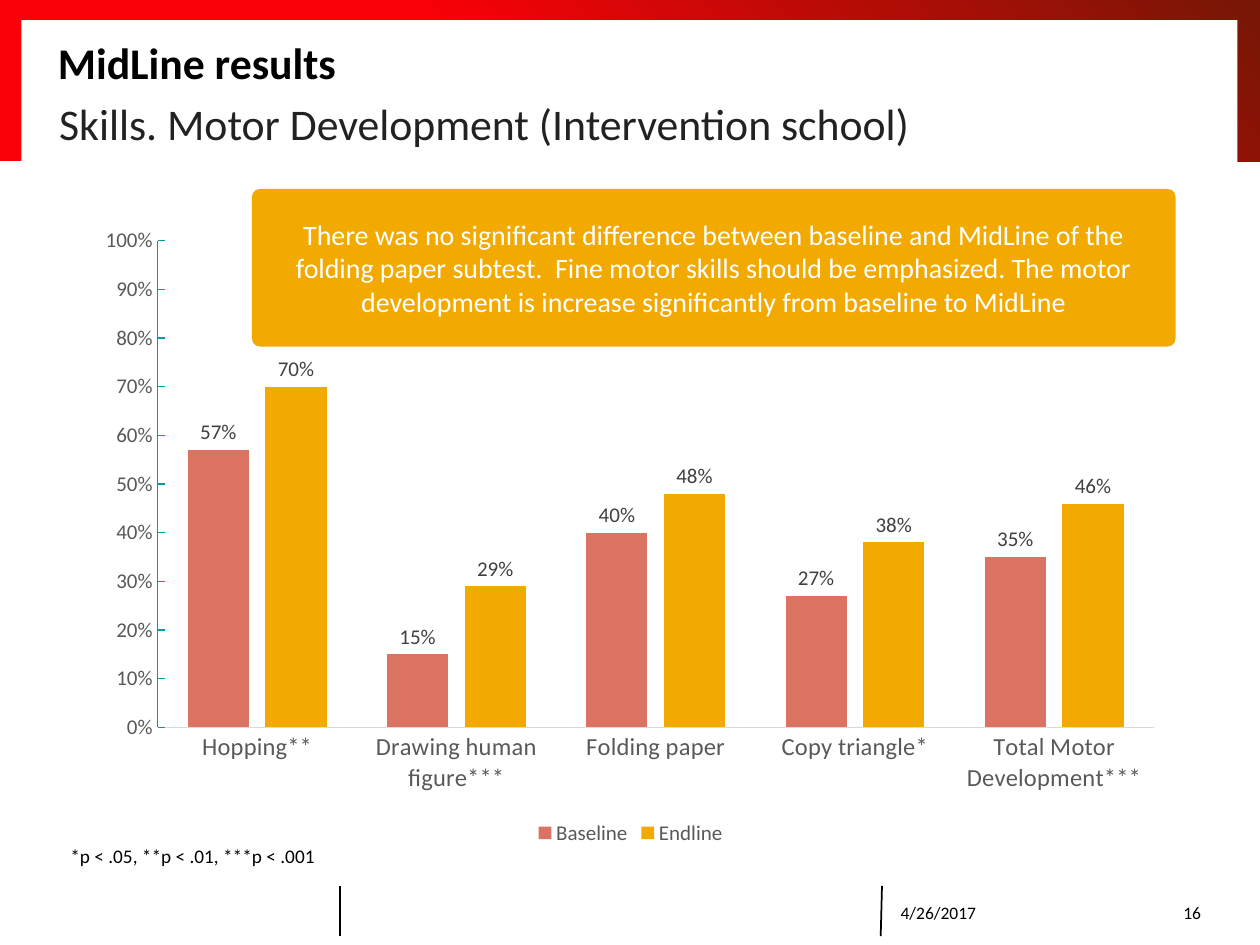
from lxml.etree import SubElement
from pptx import Presentation
from pptx.chart.data import CategoryChartData
from pptx.dml.color import RGBColor
from pptx.enum.chart import XL_CHART_TYPE, XL_LABEL_POSITION, XL_LEGEND_POSITION, XL_TICK_MARK
from pptx.enum.shapes import MSO_CONNECTOR, MSO_SHAPE
from pptx.enum.text import MSO_ANCHOR, PP_ALIGN
from pptx.oxml.ns import qn
from pptx.util import Inches, Pt

FONT = "Calibri"
BLACK = RGBColor(0x00, 0x00, 0x00)
WHITE = RGBColor(0xFF, 0xFF, 0xFF)
INK = RGBColor(0x22, 0x22, 0x21)
RED = RGBColor(0xFA, 0x00, 0x07)
MAROON = RGBColor(0x76, 0x17, 0x06)
CORAL = RGBColor(0xDB, 0x73, 0x63)
AMBER = RGBColor(0xF2, 0xA9, 0x00)
TEAL = RGBColor(0x00, 0x9C, 0xA6)
AXIS_TEXT = RGBColor(0x59, 0x59, 0x59)
LABEL_TEXT = RGBColor(0x40, 0x40, 0x40)
AXIS_LINE = RGBColor(0xD9, 0xD9, 0xD9)

TITLE = "MidLine results"
SUBTITLE = "Skills. Motor Development (Intervention school)"
FINDING = (
    "There was no significant difference between baseline and MidLine of the "
    "folding paper subtest.  Fine motor skills should be emphasized. "
    "The motor development is increase significantly from baseline to MidLine"
)
SIGNIFICANCE = "*p < .05, **p < .01, ***p < .001"
DATE, PAGE_NUMBER = "4/26/2017", "16"

SKILLS = ["Hopping**", "Drawing human figure***", "Folding paper",
          "Copy triangle*", "Total Motor Development***"]
SERIES = [
    ("Baseline", [0.57, 0.15, 0.40, 0.27, 0.35], CORAL),
    ("Endline", [0.70, 0.29, 0.48, 0.38, 0.46], AMBER),
]
PLOT_AREA = {"x": 0.067, "y": 0.038, "w": 0.912, "h": 0.768}
FOOTER_RULES = [(2.7, 2.7), (7, 6.99)]


def set_font(font, size, color, bold=False):
    font.name, font.size, font.bold = FONT, Pt(size), bold
    font.color.rgb = color


def write(frame, text, size, color=BLACK, bold=False, align=PP_ALIGN.LEFT,
          anchor=MSO_ANCHOR.MIDDLE, wrap=True, inset=True):
    frame.word_wrap = wrap
    frame.vertical_anchor = anchor
    if not inset:
        frame.margin_left = frame.margin_right = 0
        frame.margin_top = frame.margin_bottom = 0
    para = frame.paragraphs[0]
    para.alignment = align
    span = para.add_run()
    span.text = text
    set_font(span.font, size, color, bold)


def add_text(page, bounds, text, size, **formatting):
    box = page.shapes.add_textbox(*map(Inches, bounds))
    write(box.text_frame, text, size, **formatting)


def add_panel(page, kind, bounds, color=None):
    panel = page.shapes.add_shape(kind, *map(Inches, bounds))
    panel.shadow.inherit = False
    panel.line.fill.background()
    if color is not None:
        panel.fill.solid()
        panel.fill.fore_color.rgb = color
    return panel


def add_frame(page):
    """Red gradient band with a white inner panel, and the footer rules."""
    band = add_panel(page, MSO_SHAPE.RECTANGLE, (0, 0, 10, 1.28))
    band.fill.gradient()
    band.fill.gradient_angle = 45
    for stop, position, color in zip(band.fill.gradient_stops, (0.4, 1), (RED, MAROON)):
        stop.position = position
        stop.color.rgb = color
    add_panel(page, MSO_SHAPE.RECTANGLE, (0.17, 0.16, 9.65, 1.18), WHITE)
    for top_x, bottom_x in FOOTER_RULES:
        rule = page.shapes.add_connector(
            MSO_CONNECTOR.STRAIGHT, *map(Inches, (top_x, 7.03, bottom_x, 7.43)))
        rule.line.color.rgb = BLACK
        rule.line.width = Pt(1)
        SubElement(rule._element.spPr, qn("a:effectLst"))


def style_axis(axis, size, line_color, tick):
    axis.has_major_gridlines = False
    axis.major_tick_mark = tick
    axis.minor_tick_mark = XL_TICK_MARK.NONE
    set_font(axis.tick_labels.font, size, AXIS_TEXT)
    axis.format.line.color.rgb = line_color
    axis.format.line.width = Pt(0.75)


def place_plot(chart):
    """Fix the inner plot area as fractions of the chart."""
    area = chart._chartSpace.chart.plotArea
    for old in area.findall(qn("c:layout")):
        area.remove(old)
    layout = area.makeelement(qn("c:layout"))
    area.insert(0, layout)
    manual = SubElement(layout, qn("c:manualLayout"))
    settings = {"layoutTarget": "inner", "xMode": "edge", "yMode": "edge", **PLOT_AREA}
    for name, value in settings.items():
        SubElement(manual, qn(f"c:{name}")).set("val", str(value))


def add_skill_chart(page):
    data = CategoryChartData(number_format="0%")
    data.categories = SKILLS
    for name, values, _ in SERIES:
        data.add_series(name, values)
    chart = page.shapes.add_chart(
        XL_CHART_TYPE.COLUMN_CLUSTERED, *map(Inches, (0.67, 1.72, 8.67, 5.03)), data).chart
    chart.has_title = False
    set_font(chart.font, 10, BLACK)
    chart.has_legend = True
    chart.legend.position = XL_LEGEND_POSITION.BOTTOM
    chart.legend.include_in_layout = False
    set_font(chart.legend.font, 12, AXIS_TEXT)

    style_axis(chart.category_axis, 14, AXIS_LINE, XL_TICK_MARK.NONE)
    style_axis(chart.value_axis, 12, TEAL, XL_TICK_MARK.INSIDE)
    scale = chart.value_axis
    scale.minimum_scale, scale.maximum_scale, scale.major_unit = 0, 1, 0.1
    scale.tick_labels.number_format = "0%"
    scale.tick_labels.number_format_is_linked = False

    plot = chart.plots[0]
    plot.vary_by_categories = False
    plot.gap_width, plot.overlap = 99, -27
    for series, (_, _, color) in zip(plot.series, SERIES):
        series.format.fill.solid()
        series.format.fill.fore_color.rgb = color
        labels = series.data_labels
        labels.show_value = True
        labels.position = XL_LABEL_POSITION.OUTSIDE_END
        labels.number_format = "0%"
        labels.number_format_is_linked = False
        set_font(labels.font, 12, LABEL_TEXT)
    place_plot(chart)


def main():
    deck = Presentation()
    deck.slide_width, deck.slide_height = Inches(10), Inches(7.5)
    page = deck.slides.add_slide(deck.slide_layouts[6])

    add_frame(page)
    add_text(page, (0.46, 0.22, 9.06, 0.55), TITLE, 25, bold=True, inset=False)
    add_text(page, (0.47, 0.77, 9.06, 0.4), SUBTITLE, 25, color=INK,
             anchor=MSO_ANCHOR.TOP, inset=False)
    add_skill_chart(page)

    callout = add_panel(page, MSO_SHAPE.ROUNDED_RECTANGLE, (2, 1.5, 7.33, 1.25), AMBER)
    callout.adjustments[0] = 0.05
    write(callout.text_frame, FINDING, 16, color=WHITE, align=PP_ALIGN.CENTER)

    add_text(page, (0.46, 6.65, 2.18, 0.29), SIGNIFICANCE, 11,
             anchor=MSO_ANCHOR.TOP, wrap=False)
    add_text(page, (7.05, 7.04, 1.73, 0.4), DATE, 10)
    add_text(page, (8.78, 7.04, 0.85, 0.4), PAGE_NUMBER, 10, align=PP_ALIGN.RIGHT)
    deck.save("out.pptx")


if __name__ == "__main__":
    main()
